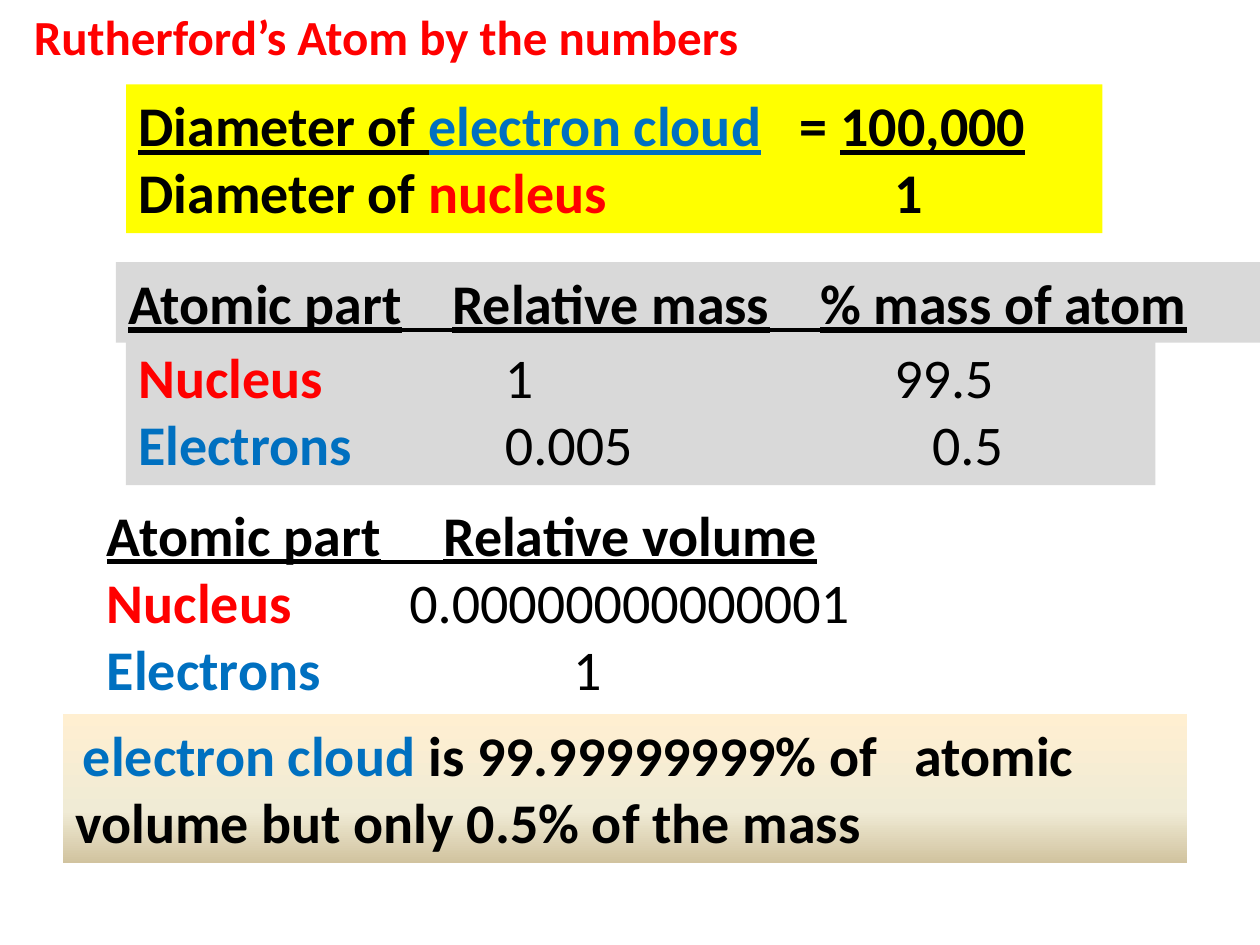
"""Build a slide on the size, mass and volume of the parts of an atom."""
import copy

import pptx
import pptx.dml.color
import pptx.enum.dml
import pptx.enum.shapes
import pptx.enum.text
import pptx.oxml
import pptx.oxml.ns
import pptx.util
from pptx.util import Inches

HUES = {
    "black": "000000", "red": "FF0000", "blue": "0070C0",
    "gray": "D9D9D9", "yellow": "FFFF00",
    "cream": "FFEFD1", "sand": "F0EBD5", "tan": "D1C39F",
}
FRAME = {
    "word_wrap": True,
    "auto_size": pptx.enum.text.MSO_AUTO_SIZE.SHAPE_TO_FIT_TEXT,
    "vertical_anchor": pptx.enum.text.MSO_ANCHOR.TOP,
}
PLAIN = {"name": "Calibri", "bold": False, "underline": False}
BOLD = PLAIN | {"bold": True}
UNDER = BOLD | {"underline": True}


def tint(name):
    return pptx.dml.color.RGBColor.from_string(HUES[name])


def write(box, size, lines):
    frame = box.text_frame
    for key, value in FRAME.items():
        setattr(frame, key, value)
    for i, (tabs, runs) in enumerate(lines):
        para = frame.add_paragraph() if i else frame.paragraphs[0]
        para.alignment = pptx.enum.text.PP_ALIGN.LEFT
        if tabs:
            stops = pptx.oxml.parse_xml(
                f"<a:tabLst {pptx.oxml.ns.nsdecls('a')}>"
                + "".join(f'<a:tab pos="{Inches(t)}" algn="l"/>' for t in tabs)
                + "</a:tabLst>")
            para._p.get_or_add_pPr().append(stops)
        for text, hue, form in runs:
            run = para.add_run()
            run.text = text
            run.font.size = pptx.util.Pt(size)
            run.font.color.rgb = tint(hue)
            for key, value in form.items():
                setattr(run.font, key, value)


deck = pptx.Presentation()
deck.slide_width, deck.slide_height = Inches(10), Inches(7.5)
slide = deck.slides.add_slide(deck.slide_layouts[6])

blocks = [
    ((0.17, 0, 7.5, 0.57), None, 28, [
        ((), [("Rutherford’s Atom by the numbers", "red", BOLD)])]),
    ((0.92, 2.08, 9.08, 0.64), "gray", 32, [
        ((2.57, 5.49), [("Atomic part\tRelative mass\t% mass of atom", "black", UNDER)])]),
    ((1, 2.67, 8.17, 1.18), "gray", 32, [
        ((2.91, 6), [("Nucleus", "red", BOLD), ("\t1\t99.5", "black", PLAIN)]),
        ((2.91, 6.3), [("Electrons", "blue", BOLD), ("\t0.005\t0.5", "black", PLAIN)])]),
    ((0.75, 3.92, 9.25, 2.02), None, 32, [
        ((2.67,), [("Atomic part\tRelative volume", "black", UNDER)]),
        ((2.4,), [("Nucleus", "red", BOLD), ("\t0.00000000000001", "black", PLAIN)]),
        ((3.7,), [("Electrons", "blue", BOLD), ("\t1", "black", PLAIN)])]),
    ((1, 0.67, 7.75, 1.18), "yellow", 32, [
        ((5.25,), [("Diameter of ", "black", UNDER), ("electron cloud", "blue", UNDER),
                   ("\t= ", "black", BOLD), ("100,000", "black", UNDER)]),
        ((6,), [("Diameter of ", "black", BOLD), ("nucleus", "red", BOLD),
                ("\t1", "black", BOLD)])]),
    ((0.5, 5.67, 8.92, 1.18), ("cream", "sand", "tan"), 32, [
        ((0.06, 6.66), [("\telectron cloud ", "blue", BOLD),
                        ("is 99.99999999% of\tatomic volume but only 0.5% of the mass",
                         "black", BOLD)])]),
]

for place, fill, size, lines in blocks:
    spot = [Inches(v) for v in place]
    if fill is None:
        box = slide.shapes.add_textbox(*spot)
    else:
        box = slide.shapes.add_shape(pptx.enum.shapes.MSO_SHAPE.RECTANGLE, *spot)
        box.shadow.inherit = False
        box.line.fill.background()
        if isinstance(fill, str):
            box.fill.solid()
            box.fill.fore_color.rgb = tint(fill)
        else:
            box.fill.gradient()
            box.fill.gradient_angle = 270
            first = box._element.spPr.find(".//" + pptx.oxml.ns.qn("a:gs"))
            first.addnext(copy.deepcopy(first))
            for stop, hue, at in zip(box.fill.gradient_stops, fill, (0, 0.65, 1)):
                stop.color.rgb = tint(hue)
                stop.position = at
    write(box, size, lines)

for left, right, y in ((3.17, 3.6, 2.62), (6.09, 6.52, 2.62), (3, 3.53, 4.46)):
    rule = slide.shapes.add_connector(
        pptx.enum.shapes.MSO_CONNECTOR.STRAIGHT,
        Inches(left), Inches(y), Inches(right), Inches(y))
    rule.line.color.rgb = tint("black")
    rule.line.width = pptx.util.Pt(2.75)
    rule._element.spPr.append(
        pptx.oxml.parse_xml(f"<a:effectLst {pptx.oxml.ns.nsdecls('a')}/>"))

deck.save("out.pptx")
